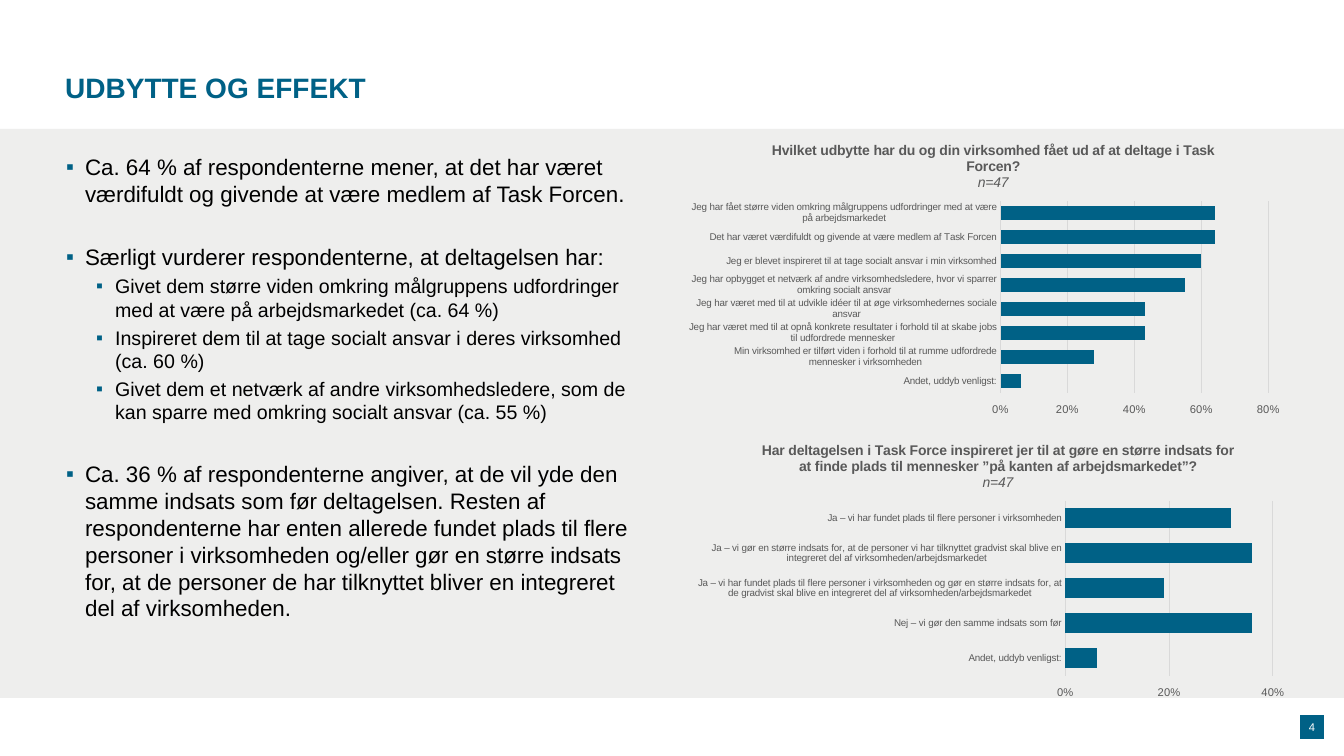
from dataclasses import dataclass

from lxml.etree import SubElement
from pptx import Presentation
from pptx.chart.data import CategoryChartData
from pptx.dml.color import RGBColor
from pptx.enum.chart import XL_CHART_TYPE, XL_TICK_LABEL_POSITION, XL_TICK_MARK
from pptx.enum.shapes import MSO_SHAPE
from pptx.enum.text import MSO_ANCHOR, MSO_AUTO_SIZE, PP_ALIGN
from pptx.oxml import parse_xml
from pptx.oxml.ns import nsdecls, qn
from pptx.util import Pt

FONT = "Arial"
BLUE = RGBColor(0x00, 0x61, 0x86)
PALE = RGBColor(0xEE, 0xEE, 0xED)
BLACK = RGBColor(0, 0, 0)
WHITE = RGBColor(0xFF, 0xFF, 0xFF)
GREY = RGBColor(0x59, 0x59, 0x59)
GRID = RGBColor(0xD9, 0xD9, 0xD9)


def px(num: int) -> int:
    return round(num * 914400 / 100.8)


@dataclass
class Box:
    left: int
    top: int
    width: int
    height: int

    def emu(self) -> list[int]:
        return [px(num) for num in (self.left, self.top, self.width, self.height)]


@dataclass
class Point:
    text: str
    level: int = 0
    before: float = 3


@dataclass
class Graph:
    box: Box
    plot: Box  # relative to the chart's own corner
    title: str
    bars: dict[str, float]
    top: float


POINTS = [
    Point("Ca. 64 % af respondenterne mener, at det har været værdifuldt og givende "
          "at være medlem af Task Forcen.", before=0),
    Point("Særligt vurderer respondenterne, at deltagelsen har:", before=26),
    Point("Givet dem større viden omkring målgruppens udfordringer med at være på "
          "arbejdsmarkedet (ca. 64 %)", 1),
    Point("Inspireret dem til at tage socialt ansvar i deres virksomhed (ca. 60 %)", 1),
    Point("Givet dem et netværk af andre virksomhedsledere, som de kan sparre med "
          "omkring socialt ansvar (ca. 55 %)", 1),
    Point("Ca. 36 % af respondenterne angiver, at de vil yde den samme indsats som før "
          "deltagelsen. Resten af respondenterne har enten allerede fundet plads til "
          "flere personer i virksomheden og/eller gør en større indsats for, at de "
          "personer de har tilknyttet bliver en integreret del af virksomheden.",
          before=26),
]

GRAPHS = [
    Graph(Box(689, 127, 608, 293), Box(311, 74, 268, 192),
          "Hvilket udbytte har du og din virksomhed fået ud af at deltage i Task Forcen?", {
              "Jeg har fået større viden omkring målgruppens udfordringer med at være "
              "på arbejdsmarkedet": 0.64,
              "Det har været værdifuldt og givende at være medlem af Task Forcen": 0.64,
              "Jeg er blevet inspireret til at tage socialt ansvar i min virksomhed": 0.6,
              "Jeg har opbygget et netværk af andre virksomhedsledere, hvor vi sparrer "
              "omkring socialt ansvar": 0.55,
              "Jeg har været med til at udvikle idéer til at øge virksomhedernes sociale "
              "ansvar": 0.43,
              "Jeg har været med til at opnå konkrete resultater i forhold til at skabe "
              "jobs til udfordrede mennesker": 0.43,
              "Min virksomhed er tilført viden i forhold til at rumme udfordrede "
              "mennesker i virksomheden": 0.28,
              "Andet, uddyb venligst:": 0.06,
          }, 0.8),
    Graph(Box(698, 427, 599, 277), Box(367, 74, 208, 175),
          "Har deltagelsen i Task Force inspireret jer til at gøre en større indsats for "
          "at finde plads til mennesker ”på kanten af arbejdsmarkedet”?", {
              "Ja – vi har fundet plads til flere personer i virksomheden": 0.32,
              "Ja – vi gør en større indsats for, at de personer vi har tilknyttet "
              "gradvist skal blive en integreret del af virksomheden/arbejdsmarkedet": 0.36,
              "Ja – vi har fundet plads til flere personer i virksomheden og gør en større "
              "indsats for, at de gradvist skal blive en integreret del af "
              "virksomheden/arbejdsmarkedet": 0.19,
              "Nej – vi gør den samme indsats som før": 0.36,
              "Andet, uddyb venligst:": 0.06,
          }, 0.4),
]


def style(font, size: float, color: RGBColor, bold: bool = False, slant: bool = False) -> None:
    font.name, font.size, font.bold, font.italic = FONT, Pt(size), bold, slant
    font.color.rgb = color


def add_block(slide, kind: MSO_SHAPE, box: Box, color: RGBColor):
    block = slide.shapes.add_shape(kind, *box.emu())
    block.shadow.inherit = False
    block.fill.solid()
    block.fill.fore_color.rgb = color
    block.line.fill.background()
    return block


def place(slide, holder, box: Box):
    """Position a placeholder, bring it to the front and return its text frame."""
    holder.left, holder.top, holder.width, holder.height = box.emu()
    slide.shapes.element.append(holder.element)
    frame = holder.text_frame
    frame.auto_size = MSO_AUTO_SIZE.NONE
    frame.vertical_anchor = MSO_ANCHOR.TOP
    return frame


def add_bullet(para, left: int) -> None:
    props = para._p.get_or_add_pPr()
    props.set("marL", str(px(left)))
    props.set("indent", str(-px(19)))
    color = SubElement(props, qn("a:buClr"))
    SubElement(color, qn("a:srgbClr"), val=str(BLUE))
    SubElement(props, qn("a:buFont"), typeface=FONT)
    SubElement(props, qn("a:buChar"), char="▪")


def fill_list(frame, points: list[Point]) -> None:
    for num, point in enumerate(points):
        para = frame.add_paragraph() if num else frame.paragraphs[0]
        para.text = point.text
        para.level = point.level
        para.space_before = Pt(point.before)
        add_bullet(para, 49 if point.level else 19)
        style(para.runs[0].font, 14 if point.level else 16, BLACK)


def fix_plot(chart, graph: Graph) -> None:
    """Pin the inner plot area to its place in the chart."""
    box, plot = graph.box, graph.plot
    parts = {"x": plot.left / box.width, "y": plot.top / box.height,
             "w": plot.width / box.width, "h": plot.height / box.height}
    modes = "".join(f'<c:{key}Mode val="edge"/>' for key in "xy")
    sizes = "".join(f'<c:{key} val="{val:.3f}"/>' for key, val in parts.items())
    area = chart._chartSpace.chart.plotArea
    for old in area.findall(qn("c:layout")):
        area.remove(old)
    area.insert(0, parse_xml(
        f'<c:layout {nsdecls("c")}><c:manualLayout><c:layoutTarget val="inner"/>'
        f"{modes}{sizes}</c:manualLayout></c:layout>"))


def add_graph(slide, graph: Graph) -> None:
    data = CategoryChartData(number_format="0%")
    data.categories = list(graph.bars)
    data.add_series("Series 1", list(graph.bars.values()))
    chart = slide.shapes.add_chart(XL_CHART_TYPE.BAR_CLUSTERED, *graph.box.emu(), data).chart
    style(chart.font, 10, BLACK)
    chart.has_legend = False

    frame = chart.chart_title.text_frame
    frame.text = graph.title
    style(frame.paragraphs[0].runs[0].font, 10, GREY, bold=True)
    count = frame.add_paragraph()
    count.text = "n=47"
    style(count.runs[0].font, 10, GREY, slant=True)
    chart.chart_title.include_in_layout = False

    plot = chart.plots[0]
    plot.gap_width = 75
    plot.vary_by_categories = False
    bars = plot.series[0].format.fill
    bars.solid()
    bars.fore_color.rgb = BLUE

    cats, vals = chart.category_axis, chart.value_axis
    for axis, size in ((cats, 7), (vals, 8)):
        axis.major_tick_mark = axis.minor_tick_mark = XL_TICK_MARK.NONE
        style(axis.tick_labels.font, size, GREY)
    cats.reverse_order = True
    vals.tick_label_position = XL_TICK_LABEL_POSITION.HIGH
    vals.minimum_scale, vals.maximum_scale, vals.major_unit = 0, graph.top, 0.2
    vals.tick_labels.number_format = "0%"
    vals.tick_labels.number_format_is_linked = False
    vals.format.line.fill.background()
    vals.has_major_gridlines = True
    for line in (cats.format.line, vals.major_gridlines.format.line):
        line.color.rgb = GRID
        line.width = Pt(0.75)
    fix_plot(chart, graph)


def main() -> None:
    deck = Presentation()
    deck.slide_width, deck.slide_height = px(1344), px(756)
    slide = deck.slides.add_slide(deck.slide_layouts[1])
    title, body = slide.placeholders

    badge = add_block(slide, MSO_SHAPE.FLOWCHART_PROCESS, Box(1300, 715, 24, 24), BLUE)
    frame = badge.text_frame
    frame.margin_left = frame.margin_right = frame.margin_top = frame.margin_bottom = 0
    frame.vertical_anchor = MSO_ANCHOR.MIDDLE
    frame.text = "4"
    frame.paragraphs[0].alignment = PP_ALIGN.CENTER
    style(frame.paragraphs[0].runs[0].font, 8, WHITE)
    add_block(slide, MSO_SHAPE.RECTANGLE, Box(0, 129, 1344, 569), PALE)

    head = place(slide, title, Box(55, 65, 1233, 57))
    head.text = "UDBYTTE OG EFFEKT"
    head.paragraphs[0].alignment = PP_ALIGN.LEFT
    style(head.paragraphs[0].runs[0].font, 20, BLUE, bold=True)
    fill_list(place(slide, body, Box(56, 148, 599, 529)), POINTS)

    for graph in GRAPHS:
        add_graph(slide, graph)
    deck.save("out.pptx")


if __name__ == "__main__":
    main()
